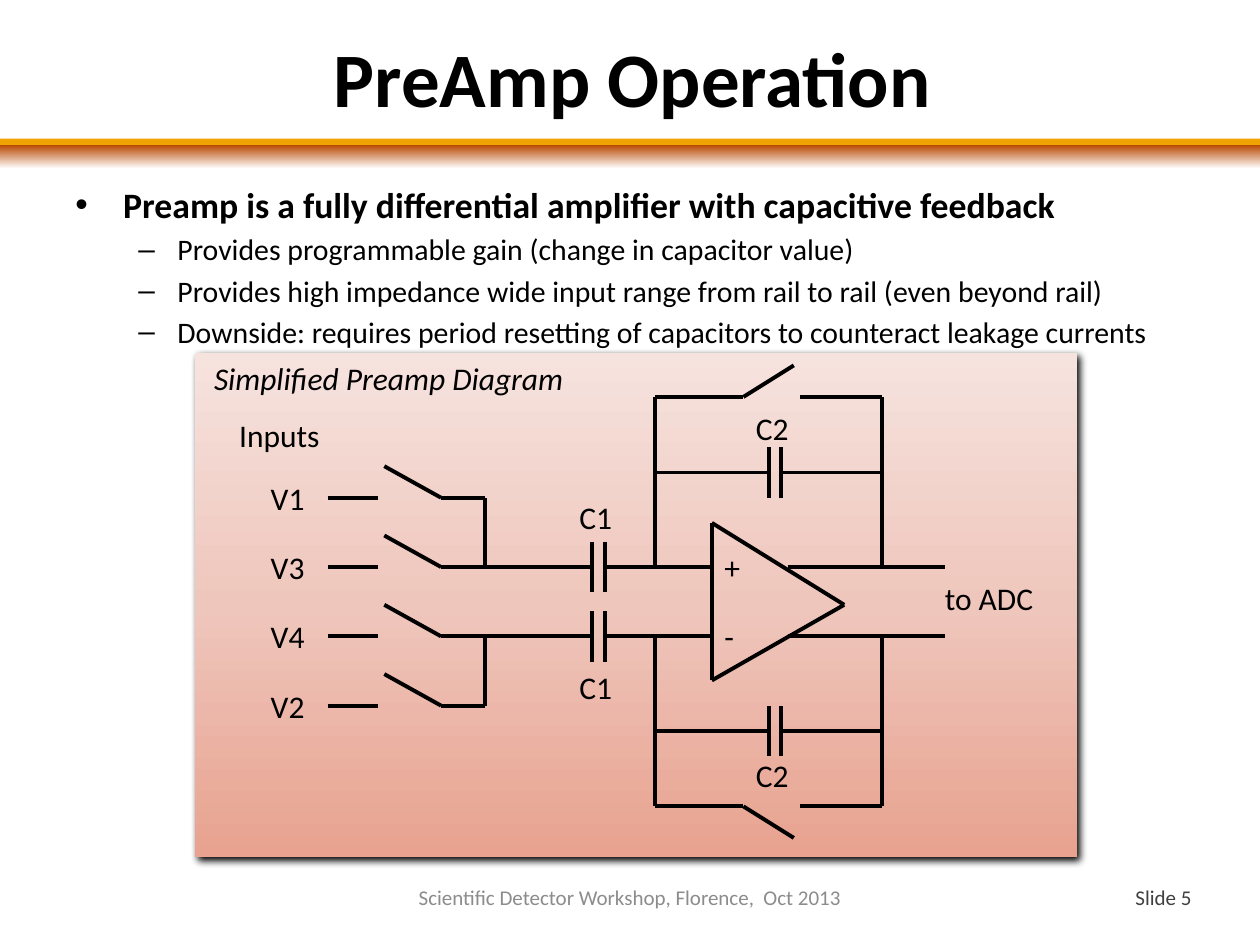
from lxml.etree import SubElement
from pptx import Presentation
from pptx.dml.color import RGBColor
from pptx.enum.shapes import MSO_CONNECTOR, MSO_SHAPE
from pptx.enum.text import MSO_ANCHOR, PP_ALIGN
from pptx.oxml.ns import qn
from pptx.util import Inches, Pt

# Content
TITLE = "PreAmp Operation"
BODY = [
    (0, "Preamp is a fully differential amplifier with capacitive feedback"),
    (1, "Provides programmable gain (change in capacitor value)"),
    (1, "Provides high impedance wide input range from rail to rail (even beyond rail)"),
    (1, "Downside: requires period resetting of capacitors to counteract leakage currents"),
]
# bullet, indent, hang, size, bold, space before
LEVELS = [("•", 0.38, 0.38, 20.4, True, 0), ("–", 0.81, 0.31, 17, False, 3.2)]
INPUTS = ["V1", "V3", "V4", "V2"]
LABELS = [
    ("+", 5.65, 4.3, 0.33), ("-", 5.65, 4.85, 0.28), ("to ADC", 7.4, 4.55, 0.91),
    ("C1", 4.5, 3.9, 0.46), ("C1", 4.5, 5.25, 0.46),
    ("C2", 5.9, 3.2, 0.46), ("C2", 5.9, 5.95, 0.46), ("Inputs", 1.8, 3.25, 0.85),
]

# Circuit: the lower half mirrors the upper half about MID
MID = 4.775
ROW, TOP, GAP = 4.5, 3.95, 0.55  # upper signal line, first input, input pitch
LOOP, RESET = 3.75, 3.15         # feedback capacitor and reset switch lines
CAPS = [(4.7, ROW), (6.1, LOOP)]  # left plate, line
WIRES = [
    (5.1, ROW, 5.65, ROW), (6.25, ROW, 7.5, ROW), (3.85, ROW, 4.45, ROW),
    (3.85, ROW, 3.85, TOP),
    (5.2, LOOP, 5.8, LOOP), (6.4, LOOP, 7, LOOP),
    (5.2, ROW, 5.2, LOOP), (7, ROW, 7, LOOP),
    (5.2, LOOP, 5.2, RESET), (7, LOOP, 7, RESET),
    (5.2, RESET, 5.9, RESET), (5.9, RESET, 6.3, 2.9), (6.35, RESET, 7, RESET),
]
AMP = [(5.65, 4.15), (6.7, 4.8), (5.65, 5.4)]

deck = Presentation()
deck.slide_width, deck.slide_height = Inches(10), Inches(7.5)
slide = deck.slides.add_slide(deck.slide_layouts[6])
shapes = slide.shapes


def color(code):
    return RGBColor.from_string(code)


def add(node, tag, **attrs):
    return SubElement(node, qn(tag), {k: str(v) for k, v in attrs.items()})


def rect(x, y, w, h):
    box = shapes.add_shape(MSO_SHAPE.RECTANGLE, *map(Inches, (x, y, w, h)))
    box.shadow.inherit = False
    box.line.fill.background()
    return box


def grade(box, angle, stops):
    box.fill.gradient()
    box.fill.gradient_angle = 360 - angle
    group = box._element.spPr.find(qn("a:gradFill")).find(qn("a:gsLst"))
    for old in list(group):
        group.remove(old)
    for pos, code in stops:
        stop = add(group, "a:gs", pos=pos * 1000)
        add(stop, "a:srgbClr", val=code)


def write(para, text, size, code="000000", bold=False, italic=False):
    run = para.add_run()
    run.text = text
    font = run.font
    font.name, font.size, font.bold, font.italic = "Calibri", Pt(size), bold, italic
    font.color.rgb = color(code)


def frame(x, y, w, h, wrap=True):
    text = shapes.add_textbox(*map(Inches, (x, y, w, h))).text_frame
    text.word_wrap = wrap
    return text


def center(text, x, y, w, h, size, **style):
    box = frame(x, y, w, h)
    box.vertical_anchor = MSO_ANCHOR.MIDDLE
    para = box.paragraphs[0]
    para.alignment = PP_ALIGN.CENTER
    write(para, text, size, **style)


def label(text, x, y, w, italic=False):
    write(frame(x, y, w, 0.4, False).paragraphs[0], text, 18, italic=italic)


def wire(*ends):
    line = shapes.add_connector(MSO_CONNECTOR.STRAIGHT, *map(Inches, ends))
    line.line.color.rgb = color("000000")
    line.line.width = Pt(2.25)
    add(line._element.spPr, "a:effectLst")


def cap(x, y):
    """Wires of a capacitor: two plates and two leads."""
    plates = [(p, y - 0.2, p, y + 0.2) for p in (x, x + 0.1)]
    return plates + [(x - 0.3, y, x, y), (x + 0.1, y, x + 0.4, y)]


# Header bands
band = rect(0, 1.1, 10, 0.05)
band.fill.solid()
band.fill.fore_color.rgb = color("EFA404")
grade(rect(0, 1.15, 10, 0.19), 90, [(0, "B84700"), (99, "FFFFFF")])

# Diagram panel with its shadow
panel = rect(1.55, 2.8, 7, 4)
grade(panel, 270, [(0, "E8A28F"), (50, "EFC6BC"), (100, "F6E3DE")])
effect = panel._element.spPr.find(qn("a:effectLst"))
shade = add(effect, "a:outerShdw", blurRad=Pt(4), dist=Pt(3), dir=45 * 60000,
            algn="tl", rotWithShape=0)
add(shade, "a:srgbClr", val="000000")

# Title and footer
center(TITLE, 0.52, 0.18, 9, 0.86, 44, bold=True)
center("Slide 5", 8.8, 6.92, 0.87, 0.4, 12, code="404040")
center("Scientific Detector Workshop, Florence,  Oct 2013",
       3.15, 6.92, 3.7, 0.4, 12, code="8C8C8C")

# Amplifier
for start, end in zip(AMP, AMP[1:] + AMP[:1]):
    wire(*start, *end)

# Capacitors and wires, upper half then its mirror
half = WIRES + [part for spot in CAPS for part in cap(*spot)]
for xa, ya, xb, yb in half:
    wire(xa, ya, xb, yb)
    wire(xa, 2 * MID - ya, xb, 2 * MID - yb)

# Input switches
for i, name in enumerate(INPUTS):
    y = TOP + i * GAP
    wire(2.6, y, 3, y)
    wire(3.05, y - 0.25, 3.5, y)
    wire(3.5, y, 3.85, y)
    label(name, 2.05, y - 0.2, 0.47)

# Labels
for item in LABELS:
    label(*item)
label("Simplified Preamp Diagram", 1.6, 2.8, 3.09, italic=True)

# Bullets
body = frame(0.5, 1.4, 9, 1.45)
for i, (level, text) in enumerate(BODY):
    mark, left, hang, size, bold, space = LEVELS[level]
    para = body.add_paragraph() if i else body.paragraphs[0]
    para.level = level
    para.space_before = Pt(space)
    props = para._p.get_or_add_pPr()
    props.set("marL", str(Inches(left)))
    props.set("indent", str(-Inches(hang)))
    add(props, "a:buFont", typeface="Arial")
    add(props, "a:buChar", char=mark)
    write(para, text, size, bold=bold)

deck.save("out.pptx")
